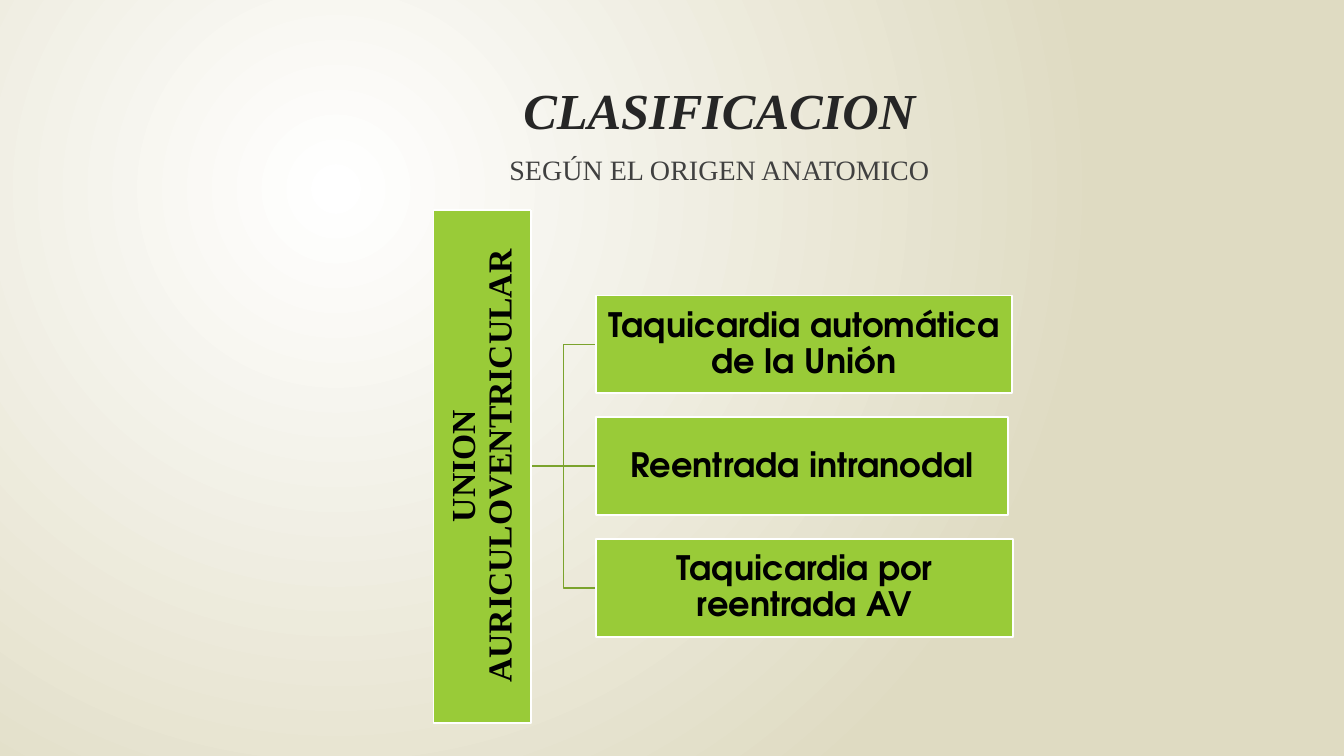
from lxml.etree import SubElement
from pptx import Presentation
from pptx.dml.color import RGBColor
from pptx.enum.shapes import MSO_CONNECTOR, MSO_SHAPE
from pptx.enum.text import MSO_ANCHOR, PP_ALIGN
from pptx.oxml.ns import qn
from pptx.util import Inches, Pt

SERIF, SANS = "Times New Roman", "TeX Gyre Adventor"


def color(code):
    return RGBColor.from_string(code)


def cells(*counts):
    """Turn grid columns or rows, ten to the inch, into lengths."""
    return [Inches(n / 10) for n in counts]


class Deck:
    green, edge, wire = "99CB38", "FFFFFF", "7BA32D"
    stroke = Pt(1.25)

    def __init__(self):
        self.prs = Presentation()
        self.prs.slide_width, self.prs.slide_height = Inches(13.33), Inches(7.5)
        self.slide = self.prs.slides.add_slide(self.prs.slide_layouts[1])

    def glow(self, inner, outer):
        """Radial background centred a quarter of the way in."""
        fill = self.slide.background.fill
        fill.gradient()
        for stop, code, pos in zip(fill.gradient_stops, (inner, outer), (0, 1)):
            stop.color.rgb, stop.position = color(code), pos
        grad = self.slide._element.find(".//" + qn("a:gradFill"))
        grad.remove(grad.find(qn("a:lin")))
        ring = SubElement(grad, qn("a:path"), {"path": "circle"})
        SubElement(ring, qn("a:fillToRect"),
                   {"l": "50000", "t": "50000", "r": "100000", "b": "100000"})

    def label(self, shape, text, code, anchor, pad, lines=1.0, **look):
        frame = shape.text_frame
        frame.word_wrap, frame.vertical_anchor = True, anchor
        for side, gap in zip(("left", "top", "right", "bottom"), pad):
            setattr(frame, f"margin_{side}", Inches(gap))
        para = frame.paragraphs[0]
        para.text, para.alignment = text, PP_ALIGN.CENTER
        para.line_spacing, para.space_before = lines, Pt(0)
        font = para.runs[0].font
        font.color.rgb = color(code)
        for name, value in look.items():
            setattr(font, name, value)
        return para

    def holder(self, index, text, code, place, top, **look):
        shape = self.slide.placeholders[index]
        shape.left, shape.top, shape.width, shape.height = cells(*place)
        return self.label(shape, text, code, MSO_ANCHOR.TOP,
                          (0.1, top, 0.1, 0.05), **look)

    def plain(self, para):
        """Take the bullet and its indent off a paragraph."""
        props = para._p.get_or_add_pPr()
        props.set("marL", "0")
        props.set("indent", "0")
        SubElement(props, qn("a:buNone"))

    def box(self, text, place, face, turn=0):
        shape = self.slide.shapes.add_shape(MSO_SHAPE.RECTANGLE, *cells(*place))
        shape.shadow.inherit, shape.rotation = False, turn
        shape.fill.solid()
        shape.fill.fore_color.rgb = color(self.green)
        shape.line.color.rgb, shape.line.width = color(self.edge), self.stroke
        self.label(shape, text, "000000", MSO_ANCHOR.MIDDLE, [0.02] * 4,
                   lines=0.9, name=face, size=Pt(24), bold=True)

    def link(self, start, end):
        kind = MSO_CONNECTOR.STRAIGHT if start[1] == end[1] else MSO_CONNECTOR.ELBOW
        line = self.slide.shapes.add_connector(kind, *cells(*start, *end))
        line.line.color.rgb, line.line.width = color(self.wire), self.stroke
        SubElement(line._element.spPr, qn("a:effectLst"))


def main():
    deck = Deck()
    deck.glow("FFFFFF", "DFDBC2")

    # Title and subtitle
    deck.holder(0, "CLASIFICACION", "262626", (16.9, 6.8, 108.9, 14), 0.1,
                name=SERIF, size=Pt(36), bold=True, italic=True)
    para = deck.holder(1, "SEGÚN EL ORIGEN ANATOMICO", "404040",
                       (16.9, 14.3, 108.9, 55.5), 0.08, name=SERIF, size=Pt(20))
    deck.plain(para)

    # Tree: one root on the left, three kinds on the right
    mid, step = 46.25, 12.07
    tall, wide = 9.7, 50.9
    root, leaf = 52.7, 59.1
    kinds = [("Taquicardia automática de la Unión", 41.3),
             ("Reentrada intranodal", 40.9),
             ("Taquicardia por reentrada AV", 41.4)]
    rows = [mid + step * n for n in (-1, 0, 1)]
    for row in rows:
        deck.link((root, mid), (leaf, row))
    deck.box("UNION AURICULOVENTRICULAR",
             (root - (tall + wide) / 2, mid - tall / 2, wide, tall), SERIF, 270)
    for (text, width), row in zip(kinds, rows):
        deck.box(text, (leaf, row - tall / 2, width, tall), SANS)

    deck.prs.save("out.pptx")


if __name__ == "__main__":
    main()
